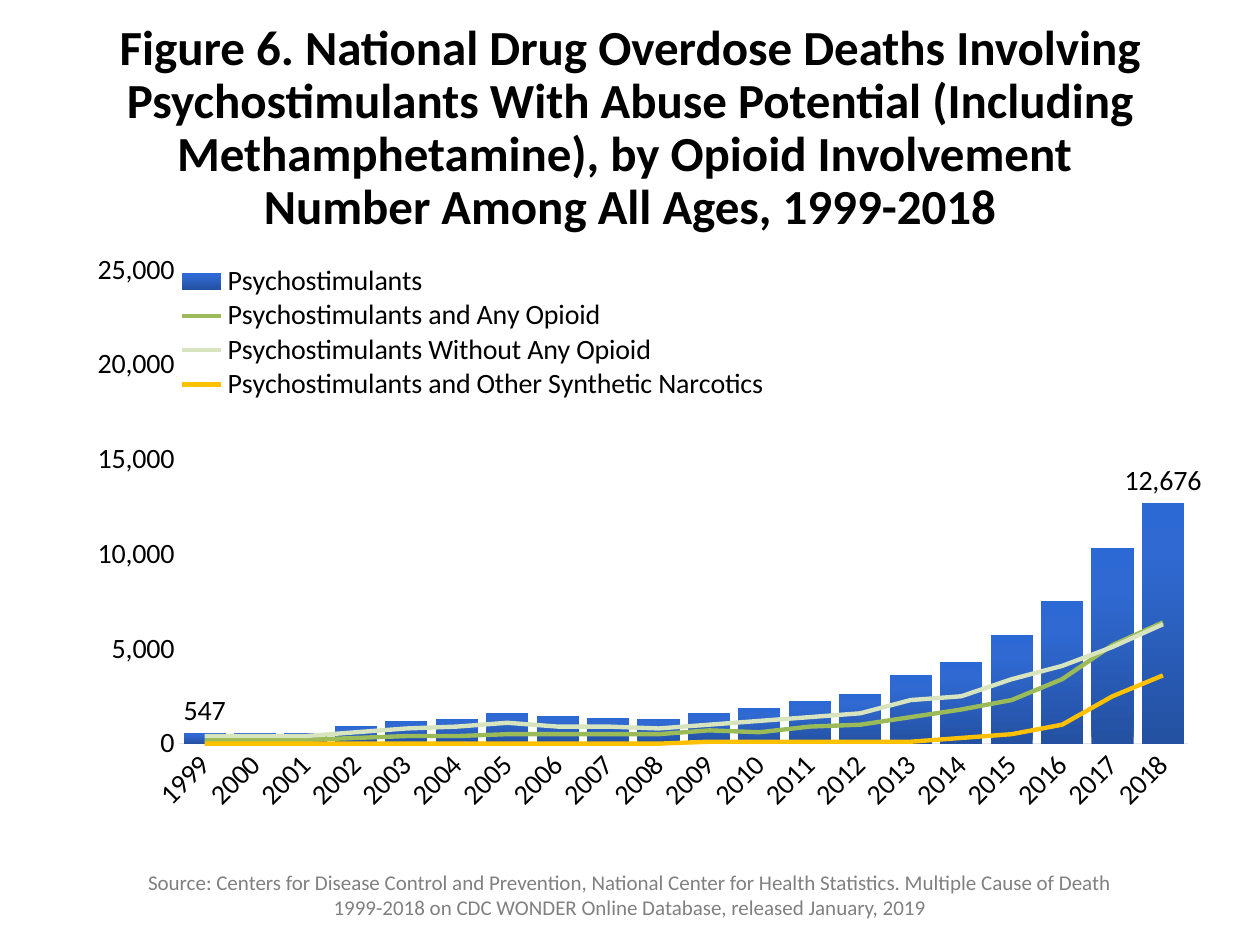
"""Build a slide with a combined column and line chart of overdose deaths, 1999-2018."""
from copy import deepcopy

from lxml import etree
from pptx import Presentation
from pptx.chart import data
from pptx.dml import color
from pptx.enum import chart as chart_enum
from pptx.enum import text
from pptx.oxml import ns
from pptx.util import Inches, Pt

BLACK = color.RGBColor(0x00, 0x00, 0x00)
GRAY = color.RGBColor(0x80, 0x80, 0x80)
AXIS_GRAY = color.RGBColor(0xE0, 0xE5, 0xEB)
DARK_BLUE = color.RGBColor(0x24, 0x51, 0xA1)
MID_BLUE = color.RGBColor(0x2F, 0x69, 0xD1)
BRIGHT_BLUE = color.RGBColor(0x2C, 0x69, 0xD5)
GREEN = color.RGBColor(0x9B, 0xBB, 0x59)
PALE_GREEN = color.RGBColor(0xD7, 0xE4, 0xBD)
AMBER = color.RGBColor(0xFF, 0xC0, 0x00)
FONT = "Calibri"

TITLE = (
    "Figure 6. National Drug Overdose Deaths Involving Psychostimulants With Abuse "
    "Potential (Including Methamphetamine), by Opioid Involvement \v"
    "Number Among All Ages, 1999-2018"
)
SOURCE = (
    "Source: Centers for Disease Control and Prevention, National Center for Health "
    "Statistics. Multiple Cause of Death 1999-2018 on CDC WONDER Online Database, "
    "released January, 2019"
)
DEATHS = {
    "Psychostimulants": [
        547, 578, 563, 941, 1179, 1305, 1608, 1462, 1378, 1302,
        1632, 1854, 2266, 2635, 3627, 4298, 5716, 7542, 10333, 12676],
    "Psychostimulants and Any Opioid": [
        200, 200, 200, 300, 400, 400, 500, 500, 500, 500,
        700, 600, 900, 1000, 1400, 1800, 2300, 3400, 5200, 6400],
    "Psychostimulants Without Any Opioid": [
        400, 400, 400, 600, 800, 900, 1100, 900, 900, 800,
        1000, 1200, 1400, 1600, 2300, 2500, 3400, 4100, 5100, 6300],
    "Psychostimulants and Other Synthetic Narcotics": [
        0, 0, 0, 0, 0, 0, 0, 0, 0, 0,
        100, 100, 100, 100, 100, 300, 500, 1000, 2500, 3600],
}


def add_text(slide, content, left, top, width, height, size, font_color, bold=False):
    text_frame = slide.shapes.add_textbox(
        Inches(left), Inches(top), Inches(width), Inches(height)).text_frame
    text_frame.word_wrap = True
    text_frame.text = content
    paragraph = text_frame.paragraphs[0]
    paragraph.alignment = text.PP_ALIGN.CENTER
    for run in paragraph.runs:
        run.font.name = FONT
        run.font.size = Pt(size)
        run.font.bold = bold
        run.font.color.rgb = font_color
    return text_frame


def set_layout(parent, index, inner, **box):
    for old_layout in parent.findall(ns.qn("c:layout")):
        parent.remove(old_layout)
    layout = etree.Element(ns.qn("c:layout"))
    manual = etree.SubElement(layout, ns.qn("c:manualLayout"))
    settings = {"layoutTarget": "inner"} if inner else {}
    settings.update(xMode="edge", yMode="edge", **box)
    for name, value in settings.items():
        etree.SubElement(manual, ns.qn(f"c:{name}")).set("val", str(value))
    parent.insert(index, layout)


presentation = Presentation()
presentation.slide_width = Inches(10)
presentation.slide_height = Inches(7.5)
slide = presentation.slides.add_slide(presentation.slide_layouts[6])

title_frame = add_text(slide, TITLE, 0, 0.3, 10, 1.45, 28, BLACK, bold=True)
title_frame.vertical_anchor = text.MSO_ANCHOR.MIDDLE
title_frame.paragraphs[0].line_spacing = 0.9

chart_data = data.CategoryChartData(number_format="#,##0")
chart_data.categories = [str(year) for year in range(1999, 2019)]
for name, values in DEATHS.items():
    chart_data.add_series(name, values)
chart = slide.shapes.add_chart(
    chart_enum.XL_CHART_TYPE.COLUMN_CLUSTERED,
    Inches(0.4), Inches(2), Inches(9.31), Inches(4.76), chart_data).chart
chart.has_title = False
chart.font.name = FONT
chart.font.size = Pt(16)
chart.font.color.rgb = BLACK

bar_plot = chart.plots[0]
bar_plot.gap_width = 20
bar_plot.vary_by_categories = False
bar_chart = bar_plot._element
line_chart = bar_chart.makeelement(ns.qn("c:lineChart"))
bar_chart.addnext(line_chart)
etree.SubElement(line_chart, ns.qn("c:grouping")).set("val", "standard")
etree.SubElement(line_chart, ns.qn("c:varyColors")).set("val", "0")
for series_element in bar_chart.findall(ns.qn("c:ser"))[1:]:
    for invert in series_element.findall(ns.qn("c:invertIfNegative")):
        series_element.remove(invert)
    line_chart.append(series_element)
etree.SubElement(line_chart, ns.qn("c:marker")).set("val", "1")
for axis_id in bar_chart.findall(ns.qn("c:axId")):
    line_chart.append(deepcopy(axis_id))

bars = bar_plot.series[0]
fill = bars.format.fill
fill.gradient()
fill.gradient_angle = 90
stop_list = bars._element.find(f".//{ns.qn('a:gsLst')}")
stop_list.append(deepcopy(stop_list[-1]))
gradient = [(0, DARK_BLUE), (0.8, MID_BLUE), (1, BRIGHT_BLUE)]
for stop, (position, stop_color) in zip(fill.gradient_stops, gradient):
    stop.position = position
    stop.color.rgb = stop_color
for index in (0, 19):
    label = bars.points[index].data_label
    label.position = chart_enum.XL_LABEL_POSITION.OUTSIDE_END
    label.font.size = Pt(16)

for series, line_color in zip(chart.plots[1].series, (GREEN, PALE_GREEN, AMBER)):
    series.smooth = False
    series.marker.style = chart_enum.XL_MARKER_STYLE.NONE
    series.format.line.color.rgb = line_color
    series.format.line.width = Pt(2.5)

for axis in (chart.category_axis, chart.value_axis):
    axis.has_major_gridlines = False
    axis.major_tick_mark = chart_enum.XL_TICK_MARK.NONE
    axis.minor_tick_mark = chart_enum.XL_TICK_MARK.NONE
    axis.tick_labels.font.size = Pt(16)
    axis.tick_labels.font.name = FONT
    axis.tick_labels.font.color.rgb = BLACK
chart.category_axis.format.line.color.rgb = AXIS_GRAY
chart.category_axis.format.line.width = Pt(0.75)
chart.category_axis._element.find(f".//{ns.qn('a:bodyPr')}").set("rot", "-2700000")
value_axis = chart.value_axis
value_axis.format.line.fill.background()
value_axis.minimum_scale = 0
value_axis.maximum_scale = 25000
value_axis.major_unit = 5000
value_axis.tick_labels.number_format = "#,##0"
value_axis.tick_labels.number_format_is_linked = False

chart.has_legend = True
legend = chart.legend
legend.position = chart_enum.XL_LEGEND_POSITION.BOTTOM
legend.include_in_layout = True
legend.font.size = Pt(16)
legend.font.name = FONT
legend.font.color.rgb = BLACK
set_layout(legend._element, 1, False, x=0.1, y=0.02, w=0.52, h=0.23)
set_layout(bar_chart.getparent(), 0, True, x=0.11, y=0.03, w=0.86, h=0.79)

add_text(slide, SOURCE, 1.02, 6.85, 7.96, 0.5, 12, GRAY)

presentation.save("out.pptx")
